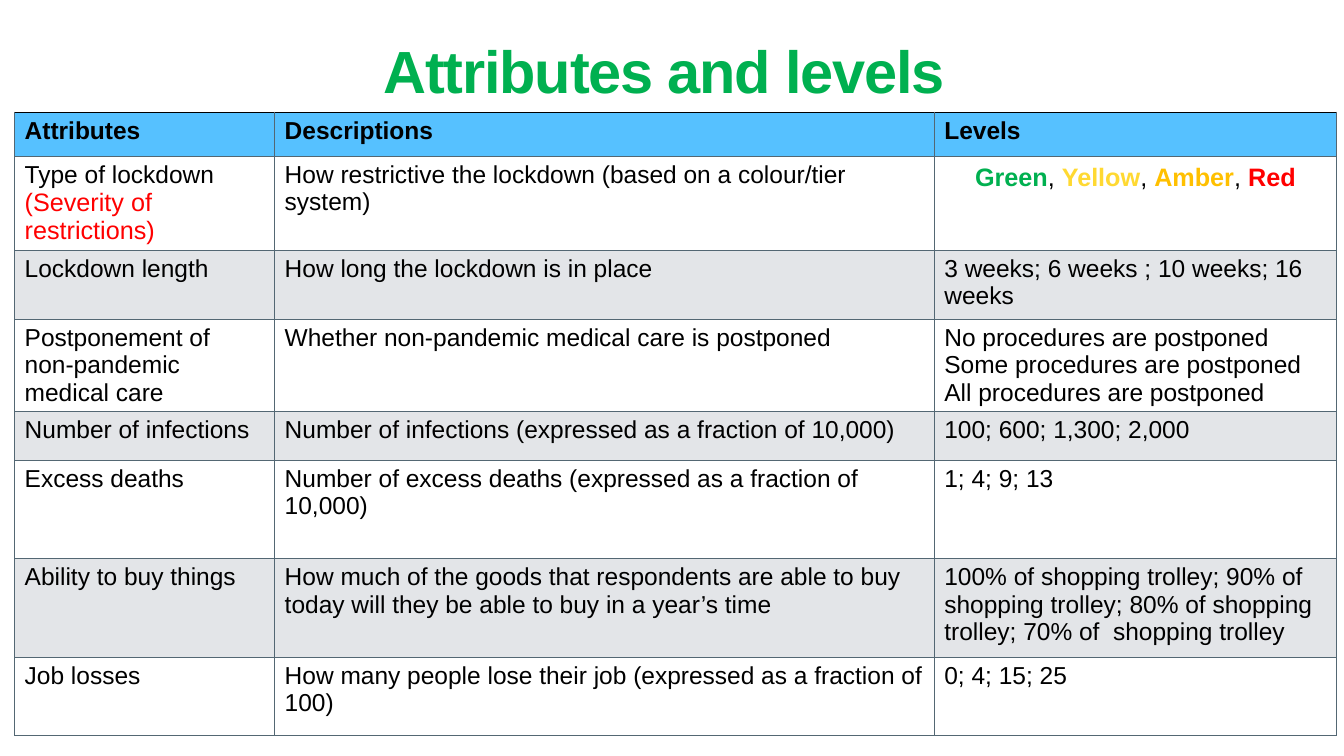
from dataclasses import dataclass

from lxml.etree import SubElement
from pptx import Presentation
from pptx.dml.color import RGBColor
from pptx.enum.text import MSO_ANCHOR, MSO_AUTO_SIZE, PP_ALIGN
from pptx.oxml.ns import qn
from pptx.util import Inches, Pt


@dataclass(frozen=True)
class Theme:
    font: str = "Arial"
    title_size: int = 85
    body_size: int = 35
    accent_size: int = 36
    black: str = "000000"
    white: str = "FFFFFF"
    green: str = "00B050"
    yellow: str = "FFD932"
    amber: str = "FFC000"
    red: str = "FF0000"
    header: str = "56C1FF"
    band: str = "E3E5E8"
    grid: str = "536773"


THEME = Theme()


@dataclass(frozen=True)
class Run:
    text: str
    color: str = THEME.black
    size: int = THEME.body_size
    bold: bool = False


@dataclass(frozen=True)
class Attribute:
    name: list[list[Run]]
    description: str
    levels: list[list[Run]]


def plain(text: str, bold: bool = False) -> list[list[Run]]:
    return [[Run(text, bold=bold)]]


def write(frame, paragraphs: list[list[Run]], *, align=None,
          line_spacing=None, space_after=None, tracking=None) -> None:
    """Fill a text frame with paragraphs of formatted runs."""
    for number, runs in enumerate(paragraphs):
        paragraph = frame.add_paragraph() if number else frame.paragraphs[0]
        paragraph.alignment = align
        paragraph.line_spacing = line_spacing
        paragraph.space_after = space_after
        for item in runs:
            for line_number, line in enumerate(item.text.split("\n")):
                if line_number:
                    paragraph.add_line_break()
                run = paragraph.add_run()
                run.text = line
                run.font.name = THEME.font
                run.font.size = Pt(item.size)
                run.font.bold = item.bold
                run.font.color.rgb = RGBColor.from_string(item.color)
                if tracking is not None:
                    run.font._element.set("spc", str(round(tracking * 100)))


def style_cell(cell, fill: str, horizontal_rule: str) -> None:
    cell.margin_left = cell.margin_right = Inches(0.2)
    cell.margin_top = cell.margin_bottom = Inches(0.1)
    # Borders come before the fill in the cell properties
    properties = cell._tc.get_or_add_tcPr()
    for side, color in (("L", THEME.grid), ("R", THEME.grid),
                        ("T", horizontal_rule), ("B", horizontal_rule)):
        line = SubElement(properties, qn(f"a:ln{side}"), w=str(Pt(1)))
        solid = SubElement(line, qn("a:solidFill"))
        SubElement(solid, qn("a:srgbClr"), val=color)
    cell.fill.solid()
    cell.fill.fore_color.rgb = RGBColor.from_string(fill)


def colour_levels() -> list[list[Run]]:
    runs = []
    for name, color in (("Green", THEME.green), ("Yellow", THEME.yellow),
                        ("Amber", THEME.amber), ("Red", THEME.red)):
        if runs:
            runs.append(Run(", ", size=THEME.accent_size))
        runs.append(Run(name, color, THEME.accent_size, True))
    return [runs]


HEADINGS = ("Attributes", "Descriptions", "Levels")
COLUMN_WIDTHS = (5.16, 13.09, 7.98)
ROW_HEIGHTS = (0.88, 1.5, 1.37, 1.37, 0.97, 1.95, 1.95, 1.55)
ATTRIBUTES = [
    Attribute([[Run("Type of lockdown")],
               [Run("(Severity of restrictions)", THEME.red, THEME.accent_size)]],
              "How restrictive the lockdown (based on a colour/tier system)",
              colour_levels()),
    Attribute(plain("Lockdown length"),
              "How long the lockdown is in place",
              plain("3 weeks; 6 weeks ; 10 weeks; 16 weeks")),
    Attribute(plain("Postponement of non-pandemic medical care"),
              "Whether non-pandemic medical care is postponed",
              plain("No procedures are postponed\nSome procedures are postponed\n"
                    "All procedures are postponed")),
    Attribute(plain("Number of infections"),
              "Number of infections (expressed as a fraction of 10,000)",
              plain("100; 600; 1,300; 2,000")),
    Attribute(plain("Excess deaths"),
              "Number of excess deaths (expressed as a fraction of 10,000)",
              plain("1; 4; 9; 13")),
    Attribute(plain("Ability to buy things"),
              "How much of the goods that respondents are able to buy today "
              "will they be able to buy in a year’s time",
              plain("100% of shopping trolley; 90% of shopping trolley; "
                    "80% of shopping trolley; 70% of  shopping trolley")),
    Attribute(plain("Job losses"),
              "How many people lose their job (expressed as a fraction of 100)",
              plain("0; 4; 15; 25")),
]


def add_title(slide) -> None:
    title = slide.shapes.title
    title.left, title.top = Inches(1.83), Inches(0.8)
    title.width, title.height = Inches(23), Inches(1.43)
    frame = title.text_frame
    frame.word_wrap = True
    frame.auto_size = MSO_AUTO_SIZE.NONE
    frame.vertical_anchor = MSO_ANCHOR.MIDDLE
    frame.margin_left = frame.margin_right = Inches(0.06)
    frame.margin_top = frame.margin_bottom = Inches(0.06)
    heading = Run("Attributes and levels ", THEME.green, THEME.title_size, True)
    write(frame, [[heading]], align=PP_ALIGN.CENTER, line_spacing=0.8, tracking=-1.7)


def add_attribute_table(slide) -> None:
    holder = slide.shapes.add_table(
        len(ROW_HEIGHTS), len(COLUMN_WIDTHS),
        Inches(0.29), Inches(2.22), Inches(26.23), Inches(12.61))
    table = holder.table
    for column, width in zip(table.columns, COLUMN_WIDTHS):
        column.width = Inches(width)
    for row, height in zip(table.rows, ROW_HEIGHTS):
        row.height = Inches(height)
    holder.height = Inches(12.61)

    # Header row
    for column, heading in enumerate(HEADINGS):
        cell = table.cell(0, column)
        style_cell(cell, THEME.header, THEME.black)
        write(cell.text_frame, plain(heading, bold=True))

    # Banded attribute rows
    for row, attribute in enumerate(ATTRIBUTES, start=1):
        fill = THEME.white if row % 2 else THEME.band
        contents = (attribute.name, plain(attribute.description), attribute.levels)
        for column, paragraphs in enumerate(contents):
            cell = table.cell(row, column)
            style_cell(cell, fill, THEME.grid)
            # The list of colours is the only centred entry
            centred = {"align": PP_ALIGN.CENTER, "line_spacing": 1.07,
                       "space_after": Pt(8)} if len(paragraphs[0]) > 1 else {}
            write(cell.text_frame, paragraphs, **centred)


def main() -> None:
    presentation = Presentation()
    presentation.slide_width = Inches(26.67)
    presentation.slide_height = Inches(15)
    slide = presentation.slides.add_slide(presentation.slide_layouts[5])
    add_title(slide)
    add_attribute_table(slide)
    presentation.save("out.pptx")


if __name__ == "__main__":
    main()
